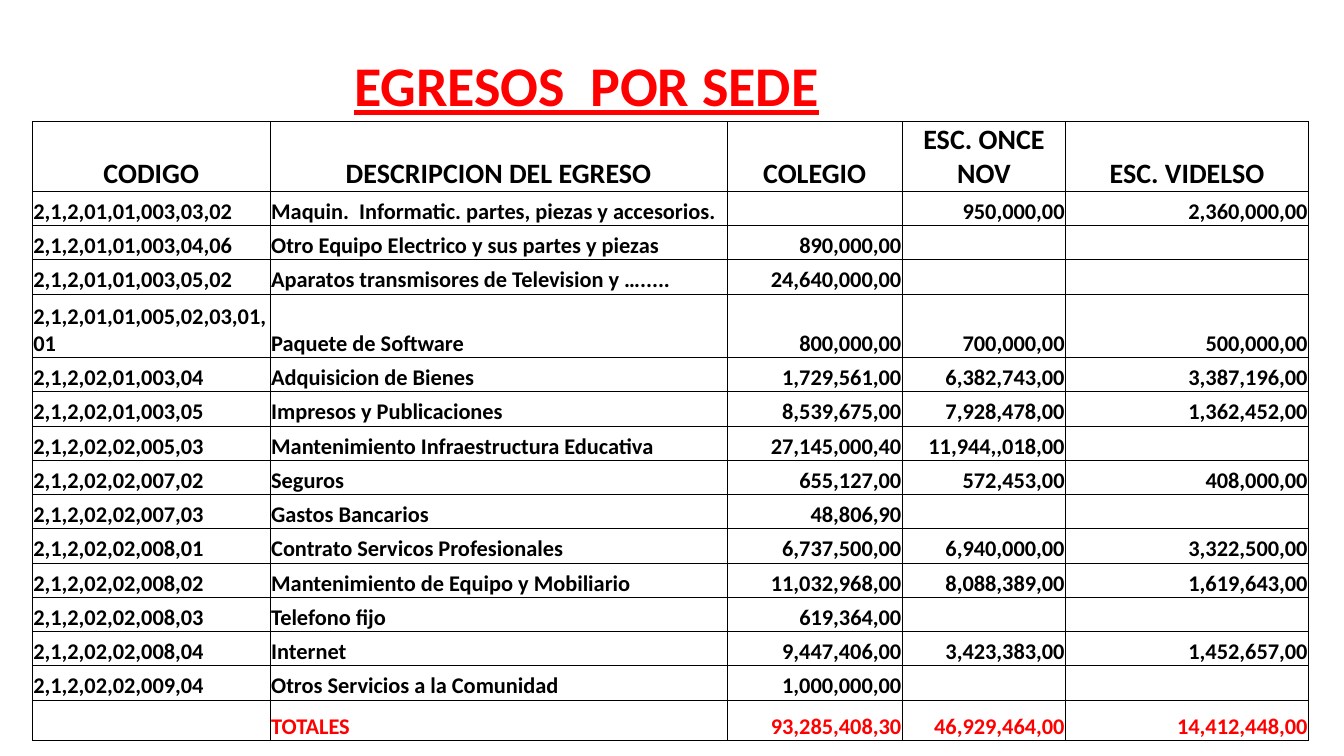
from lxml import etree
from pptx import Presentation
from pptx.dml.color import RGBColor
from pptx.enum.text import MSO_ANCHOR, PP_ALIGN
from pptx.oxml.ns import qn
from pptx.util import Inches, Pt

BOTTOM = MSO_ANCHOR.BOTTOM
LEFT, CENTER, RIGHT = PP_ALIGN.LEFT, PP_ALIGN.CENTER, PP_ALIGN.RIGHT

COLORS = {"text": "000000", "accent": "FF0000", "border": "000000"}
FONT = "Calibri"
TITLE_SIZE, HEADER_SIZE, BODY_SIZE = 40, 20, 16
THIN, THICK = 0.5, 1
PLAIN_STYLE = "{2D5ABB26-0587-4C30-8999-92F81FD0307C}"

SLIDE_WIDTH, SLIDE_HEIGHT = 13.33, 7.5
TABLE_LEFT, TABLE_TOP = 0.32, 0.52
COLUMN_WIDTHS = [2.36, 4.53, 1.74, 1.62, 2.41]
TITLE_HEIGHT, HEADER_HEIGHT, TOTALS_HEIGHT = 0.46, 0.42, 0.4
ROW_HEIGHT, TWO_LINE_HEIGHT = 0.34, 0.63
CODE_LINE_LENGTH = 25

TITLE = "EGRESOS  POR SEDE"
HEADERS = ["CODIGO", "DESCRIPCION DEL EGRESO", "COLEGIO", "ESC. ONCE NOV", "ESC. VIDELSO"]
EXPENSES = [
    ["2,1,2,01,01,003,03,02", "Maquin.  Informatic. partes, piezas y accesorios.",
     "", "950,000,00", "2,360,000,00"],
    ["2,1,2,01,01,003,04,06", "Otro Equipo Electrico y sus partes y piezas", "890,000,00", "", ""],
    ["2,1,2,01,01,003,05,02", "Aparatos transmisores de Television y ….....",
     "24,640,000,00", "", ""],
    ["2,1,2,01,01,005,02,03,01,01", "Paquete de Software",
     "800,000,00", "700,000,00", "500,000,00"],
    ["2,1,2,02,01,003,04", "Adquisicion de Bienes",
     "1,729,561,00", "6,382,743,00", "3,387,196,00"],
    ["2,1,2,02,01,003,05", "Impresos y Publicaciones",
     "8,539,675,00", "7,928,478,00", "1,362,452,00"],
    ["2,1,2,02,02,005,03", "Mantenimiento Infraestructura Educativa",
     "27,145,000,40", "11,944,,018,00", ""],
    ["2,1,2,02,02,007,02", "Seguros", "655,127,00", "572,453,00", "408,000,00"],
    ["2,1,2,02,02,007,03", "Gastos Bancarios", "48,806,90", "", ""],
    ["2,1,2,02,02,008,01", "Contrato Servicos Profesionales",
     "6,737,500,00", "6,940,000,00", "3,322,500,00"],
    ["2,1,2,02,02,008,02", "Mantenimiento de Equipo y Mobiliario",
     "11,032,968,00", "8,088,389,00", "1,619,643,00"],
    ["2,1,2,02,02,008,03", "Telefono fijo", "619,364,00", "", ""],
    ["2,1,2,02,02,008,04", "Internet", "9,447,406,00", "3,423,383,00", "1,452,657,00"],
    ["2,1,2,02,02,009,04", "Otros Servicios a la Comunidad", "1,000,000,00", "", ""],
]
TOTALS = ["", "TOTALES", "93,285,408,30", "46,929,464,00", "14,412,448,00"]


def set_borders(cell, widths):
    """Draw the borders given as {"L", "R", "T" or "B": points}; leave the others out."""
    properties = cell._tc.get_or_add_tcPr()
    for position, side in enumerate("LRTB"):
        line = etree.Element(qn(f"a:ln{side}"))
        if side in widths:
            line.set("w", str(Pt(widths[side])))
            fill = etree.SubElement(line, qn("a:solidFill"))
            etree.SubElement(fill, qn("a:srgbClr"), val=COLORS["border"])
        else:
            etree.SubElement(line, qn("a:noFill"))
        properties.insert(position, line)


def write_cell(cell, text, size, alignment, color="text", underline=False):
    cell.fill.background()
    cell.vertical_anchor = BOTTOM
    cell.margin_left = cell.margin_right = cell.margin_top = Inches(0.01)
    cell.margin_bottom = 0
    paragraph = cell.text_frame.paragraphs[0]
    paragraph.alignment = alignment
    if not text:
        # The end mark keeps an empty cell from stretching its row.
        etree.SubElement(paragraph._p, qn("a:endParaRPr"), sz=str(size * 100))
        return
    run = paragraph.add_run()
    run.text = text
    run.font.name = FONT
    run.font.size = Pt(size)
    run.font.bold = True
    run.font.underline = underline
    run.font.color.rgb = RGBColor.from_string(COLORS[color])


def fill_title_row(table):
    table.cell(0, 1).merge(table.cell(0, 2))
    for column, cell in enumerate(table.rows[0].cells):
        is_title = column == 1
        write_cell(cell, TITLE if is_title else "", TITLE_SIZE if is_title else BODY_SIZE,
                   CENTER, "accent", underline=True)
        set_borders(cell, {"B": THICK})


def fill_header_row(table):
    last = len(HEADERS) - 1
    for column, (cell, text) in enumerate(zip(table.rows[1].cells, HEADERS)):
        write_cell(cell, text, HEADER_SIZE, CENTER)
        set_borders(cell, {"L": THIN if column else THICK, "T": THICK,
                           "R": THICK if column == last else THIN, "B": THICK})


def fill_value_row(table, row, values, color="text"):
    for column, (cell, text) in enumerate(zip(table.rows[row].cells, values)):
        write_cell(cell, text, BODY_SIZE, LEFT if column < 2 else RIGHT, color)
        set_borders(cell, {"L": THIN, "R": THIN, "T": THICK if row == 2 else THIN, "B": THIN})


def add_expense_table(slide):
    expense_heights = [TWO_LINE_HEIGHT if len(values[0]) > CODE_LINE_LENGTH else ROW_HEIGHT
                       for values in EXPENSES]
    heights = [TITLE_HEIGHT, HEADER_HEIGHT, *expense_heights, TOTALS_HEIGHT]
    frame = slide.shapes.add_table(
        len(heights), len(COLUMN_WIDTHS), Inches(TABLE_LEFT), Inches(TABLE_TOP),
        Inches(sum(COLUMN_WIDTHS)), Inches(sum(heights)))
    table = frame.table
    table.first_row = table.horz_banding = False
    table._tbl.tblPr.find(qn("a:tableStyleId")).text = PLAIN_STYLE
    for column, width in zip(table.columns, COLUMN_WIDTHS):
        column.width = Inches(width)
    for row, height in zip(table.rows, heights):
        row.height = Inches(height)

    fill_title_row(table)
    fill_header_row(table)
    for row, values in enumerate(EXPENSES, start=2):
        fill_value_row(table, row, values)
    fill_value_row(table, len(heights) - 1, TOTALS, "accent")


def main():
    presentation = Presentation()
    presentation.slide_width = Inches(SLIDE_WIDTH)
    presentation.slide_height = Inches(SLIDE_HEIGHT)
    slide = presentation.slides.add_slide(presentation.slide_layouts[6])
    add_expense_table(slide)
    presentation.save("out.pptx")


if __name__ == "__main__":
    main()
